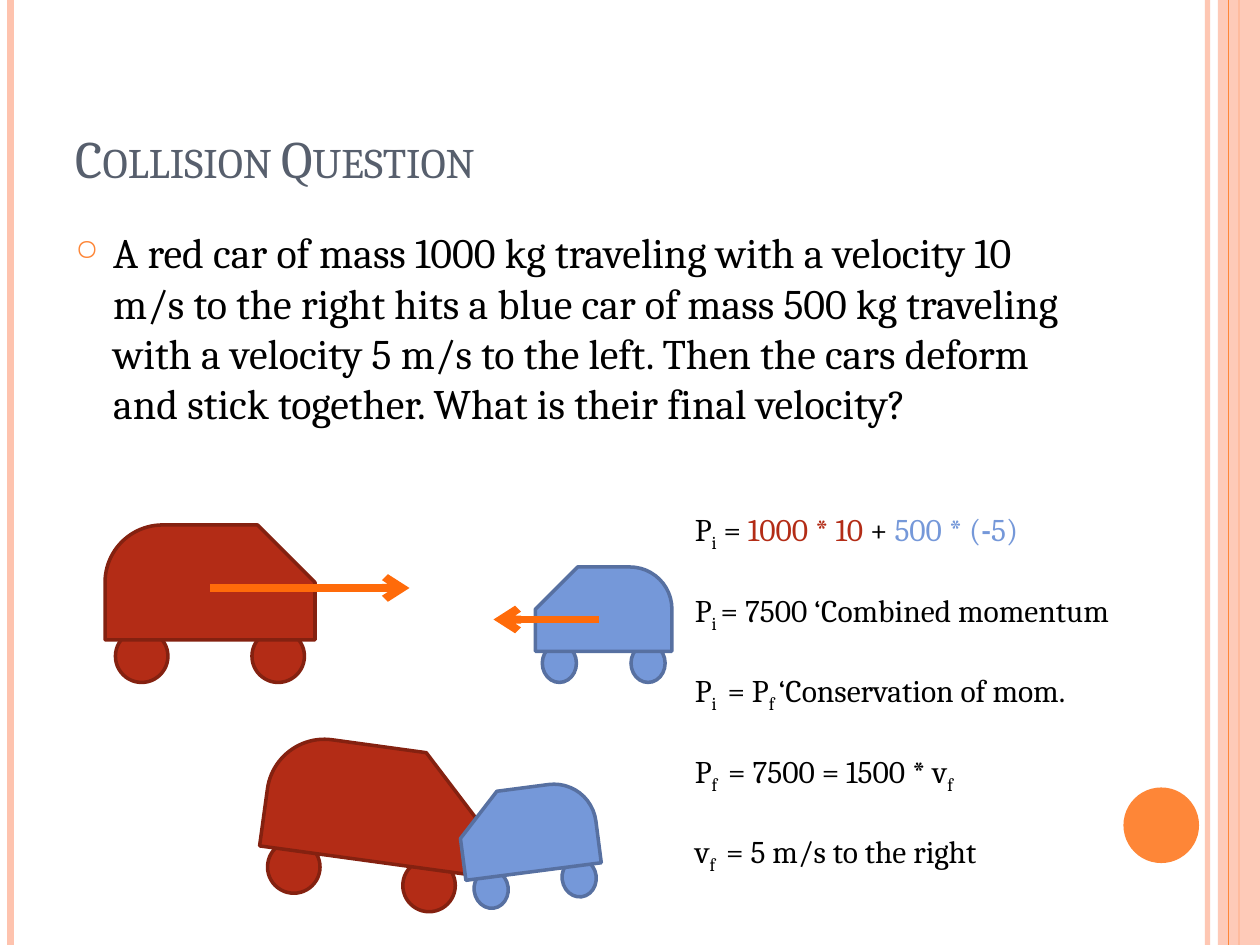
from dataclasses import dataclass
from lxml import etree
from pptx import Presentation, util as u
from pptx.dml.color import RGBColor
from pptx.enum import shapes, text
from pptx.oxml.ns import qn


@dataclass(frozen=True)
class Theme:
    font: str = "Cambria"
    head: float = 30
    body: float = 24
    math: float = 18
    ink: str = "000000"
    slate: str = "575F6D"
    peach: str = "FEC3AE"
    orange: str = "FE8637"
    arrow: str = "FF6B0A"
    red: str = "B32C16"
    rust: str = "842110"
    blue: str = "7598D9"
    navy: str = "5770A1"


T = Theme()
WIDE, HIGH = 10, 7.5
COLS = 12
UNIT = WIDE / COLS  # square grid: 12 columns by 9 rows
ROWS = HIGH / UNIT
KIND = shapes.MSO_SHAPE

# Equations: each run is text, then its format
SUB = {"baseline": "-25000"}
RED, BLUE = {"color": T.red}, {"color": T.blue}
MATH = [
    [("P", {}), ("i", SUB), (" = ", {}), ("1000 * 10 ", RED), ("+ ", {}),
     ("500 * (", BLUE), ("-", {**BLUE, "bold": True}), ("5)", BLUE)],
    [("P", {}), ("i ", SUB), ("= 7500 ‘Combined momentum", {})],
    [("P", {}), ("i ", SUB), (" = P", {}), ("f ", SUB),
     ("‘Conservation of mom.", {})],
    [("P", {}), ("f ", SUB), (" = 7500 = 1500 * v", {}), ("f", SUB)],
    [("v", {}), ("f ", SUB), (" = 5 m/s to the right", {})],
]
ASK = ("A red car of mass 1000 kg traveling with a velocity 10 m/s to the "
       "right hits a blue car of mass 500 kg traveling with a velocity 5 m/s "
       "to the left. Then the cars deform and stick together. What is their "
       "final velocity?")


def grid(*cells):
    return [u.Inches(c * UNIT) for c in cells]


def rgb(code):
    return RGBColor.from_string(code)


def node(root, tag, **attrs):
    return etree.SubElement(root, qn(tag), attrs)


def fade(part, share):
    """Set the opacity, in percent, of the solid fill in part."""
    tint = part.find(".//" + qn("a:srgbClr"))
    node(tint, "a:alpha", val=str(share * 1000))


def shape(home, kind, box, fill, edge=None):
    item = home.shapes.add_shape(kind, *grid(*box))
    item.shadow.inherit = False
    item.fill.solid()
    item.fill.fore_color.rgb = rgb(fill)
    if edge:
        item.line.color.rgb = rgb(edge)
        item.line.width = u.Pt(2)
    else:
        item.line.fill.background()
    return item


def line(page, start, end, color, width, tip=False, share=None):
    item = page.shapes.add_connector(
        shapes.MSO_CONNECTOR.STRAIGHT, *grid(*start, *end))
    item.line.color.rgb = rgb(color)
    item.line.width = u.Pt(width)
    if tip:
        node(item.line._get_or_add_ln(), "a:tailEnd", type="arrow")
    if share:
        fade(item.line._get_or_add_ln(), share)
    node(item._element.spPr, "a:effectLst")


def write(para, words, size, color=T.ink, **form):
    run = para.add_run()
    run.text = words
    run.font.color.rgb = rgb(color)
    marks = {k: form.pop(k) for k in ("baseline", "cap") if k in form}
    form = {"name": T.font, "size": u.Pt(size), **form}
    for key, val in form.items():
        setattr(run.font, key, val)
    for key, val in marks.items():
        run._r.get_or_add_rPr().set(key, val)


def area(page, box, **form):
    frame = page.shapes.add_textbox(*grid(*box)).text_frame
    for key, val in {"word_wrap": True, **form}.items():
        setattr(frame, key, val)
    return frame


def bullet(para, color):
    para.space_before = u.Pt(6)
    props = para._p.get_or_add_pPr()
    dent = u.Inches(0.3)
    props.set("marL", str(dent))
    props.set("indent", str(-dent))
    node(node(props, "a:buClr"), "a:srgbClr", val=color)
    node(props, "a:buSzPct", val="70000")
    node(props, "a:buChar", char="○")


def car(page, x, y, w, h, fill, edge, flip=False, turn=0):
    """Two wheels behind a body, all as shares of the car's box."""
    group = page.shapes.add_group_shape()
    for left in (0.05, 0.7):
        box = (x + left * w, y + h * 2 / 3, w / 4, h / 3)
        shape(group, KIND.OVAL, box, fill, edge)
    hull = shape(group, KIND.SNIP_ROUND_RECTANGLE,
                 (x, y, w, h * 0.73), fill, edge)
    for spot in range(2):
        hull.adjustments[spot] = 0.5
    if flip:
        hull._element.spPr.xfrm.set("flipH", "1")
    group.rotation = turn


def decor(page):
    def rail(x, *form, **more):
        line(page, (x, 0), (x, ROWS), *form, **more)

    rail(11.5, T.peach, 3, share=93)
    rail(0.1, T.peach, 4.5)
    rail(11.8, T.orange, 1.5)
    band = shape(page, KIND.RECTANGLE, (11.6, 0, 0.4, ROWS), T.peach)
    fade(band._element.spPr, 87)
    rail(11.7, T.orange, 0.75)
    shape(page, KIND.OVAL, (10.7, 7.5, 0.72, 0.72), T.orange)


def main():
    deck = Presentation()
    deck.slide_width, deck.slide_height = u.Inches(WIDE), u.Inches(HIGH)
    page = deck.slides.add_slide(deck.slide_layouts[6])
    decor(page)

    # Title and question
    head = area(page, (0.6, 0.36, 9.8, 1.5),
                vertical_anchor=text.MSO_ANCHOR.BOTTOM)
    write(head.paragraphs[0], "Collision Question", T.head, T.slate,
          cap="small")
    para = area(page, (0.6, 2.1, 9.8, 6.4)).paragraphs[0]
    bullet(para, T.orange)
    write(para, ASK, T.body)

    # Cars before the crash, with their velocities
    reds, blues = (T.red, T.rust), (T.blue, T.navy)
    car(page, 1, 5, 2, 1.5, *reds)
    car(page, 5.1, 5.4, 1.3, 1.1, *blues, flip=True)
    line(page, (2, 5.6), (3.9, 5.6), T.arrow, 4.5, tip=True)
    line(page, (5.7, 5.9), (4.7, 5.9), T.arrow, 4.5, tip=True)

    # Cars after the crash
    car(page, 2.51, 7.1, 2, 1.5, *reds, turn=7.8)
    car(page, 4.4, 7.5, 1.3, 1.1, *blues, flip=True, turn=352.6)

    # Worked answer
    frame = area(page, (6.5, 4.8, 6, 3.4))
    for row, runs in enumerate(MATH):
        para = frame.add_paragraph() if row else frame.paragraphs[0]
        para.space_before = u.Pt(21.5 if row else 0)
        for words, form in runs:
            write(para, words, T.math, **form)

    deck.save("out.pptx")


if __name__ == "__main__":
    main()
